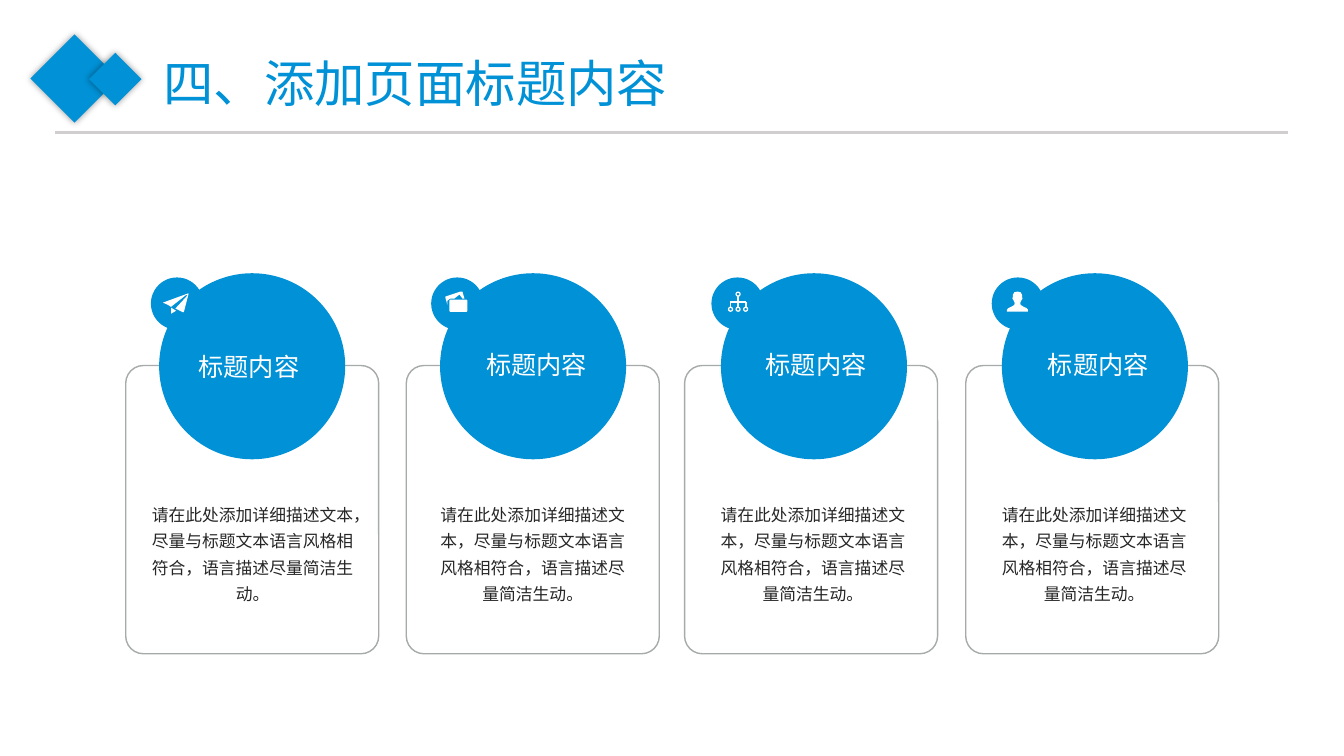
from dataclasses import dataclass

from lxml import etree
from pptx import Presentation
from pptx.dml.color import RGBColor
from pptx.enum.shapes import MSO_CONNECTOR, MSO_SHAPE
from pptx.enum.text import MSO_ANCHOR, MSO_AUTO_SIZE, PP_ALIGN
from pptx.oxml.ns import qn
from pptx.util import Pt

RECTANGLE, ROUNDED, OVAL = MSO_SHAPE.RECTANGLE, MSO_SHAPE.ROUNDED_RECTANGLE, MSO_SHAPE.OVAL
STRAIGHT = MSO_CONNECTOR.STRAIGHT
TOP, MIDDLE = MSO_ANCHOR.TOP, MSO_ANCHOR.MIDDLE
LEFT, CENTER = PP_ALIGN.LEFT, PP_ALIGN.CENTER
FIT_SHAPE = MSO_AUTO_SIZE.SHAPE_TO_FIT_TEXT


@dataclass(frozen=True)
class Theme:
    font: str = "Noto Sans CJK SC"
    blue: str = "0091D6"
    white: str = "FFFFFF"
    ink: str = "262626"
    border: str = "A6AAA9"
    rule: str = "D0CECE"
    title_size: float = 36
    label_size: float = 18
    body_size: float = 12


THEME = Theme()
TITLE = "四、添加页面标题内容"
LABEL = "标题内容"
DESCRIPTION = "请在此处添加详细描述文本，尽量与标题文本语言风格相符合，语言描述尽量简洁生动。"

COLUMNS = [
    dict(icon="plane", card=89.8, label=(110.9, 133.9, 1), description=(106.6, 147.6)),
    dict(icon="folder", card=290.2, label=(321.1, 124.6, 0.9), description=(308.9, 143.3)),
    dict(icon="network", card=489, label=(520.6, 124.6, 0.9), description=(509, 143.3)),
    dict(icon="person", card=689.8, label=(722.2, 124.6, 0.9), description=(709.9, 143.3)),
]
DIAMONDS = [(31, 33.8, 44.6), (69.1, 43.2, 26.6)]

CIRCLE_LEFT, CIRCLE_TOP, CIRCLE_SIZE, CIRCLE_PITCH = 113.7, 195.2, 132.9, 200.65
BADGE_LEFT, BADGE_TOP, BADGE_SIZE, BADGE_PITCH = 107.8, 198.2, 37.3, 200.2
CARD_TOP, CARD_WIDTH, CARD_HEIGHT = 261.1, 180.7, 205.9

PERSON_CENTER = 18.4
PERSON_SIDE = [(0, 10.1), (2.2, 10.6), (3.2, 12.2), (3.4, 14.4), (3.6, 15.2), (2.9, 16.2),
               (2, 18), (2.2, 19.6), (4.3, 20.9), (6.6, 22), (7.5, 23), (7.5, 24.5)]
OUTLINES = {
    "plane": [
        [(14.4, 25.9), (18, 23.8), (14.4, 21.6)],
        [(26.8, 11.3), (8.6, 18), (12.2, 19.6), (14.4, 21), (25.3, 12.4), (26, 13),
         (17.5, 22.2), (23, 24.9), (23.6, 24.6), (26.9, 11.8)],
    ],
    "folder": [
        [(23.8, 15.1), (22.3, 10.1), (20.9, 10.1), (10.1, 13.7), (10.1, 14.4), (11.5, 19.4),
         (11.5, 16.6), (13.7, 15.1), (16.6, 15.1), (20.2, 12.2), (22.3, 15.1)],
        [(13.6, 15.8), (25.2, 15.8), (25.9, 16.5), (25.9, 23.9), (25.2, 24.6),
         (13.6, 24.6), (12.9, 23.9), (12.9, 16.5)],
    ],
    "person": [
        [(PERSON_CENTER + dx, y) for dx, y in PERSON_SIDE]
        + [(PERSON_CENTER - dx, y) for dx, y in reversed(PERSON_SIDE)],
    ],
}
NETWORK_NODES = [(19, 11.9), (13.6, 22.7), (19, 22.7), (24.4, 22.7)]
NETWORK_LINKS = [(19, 13.3, 19, 21.3), (13, 17.3, 25, 17.3),
                 (13.6, 17.3, 13.6, 21.3), (24.4, 17.3, 24.4, 21.3)]
NODE_SIZE = 2.8

presentation = Presentation()
presentation.slide_width, presentation.slide_height = Pt(960), Pt(540)
slide = presentation.slides.add_slide(presentation.slide_layouts[5])
shapes = slide.shapes


def rgb(value):
    return RGBColor.from_string(value)


def paint(shape, fill=None, border=None, weight=1):
    shape.shadow.inherit = False
    if fill:
        shape.fill.solid()
        shape.fill.fore_color.rgb = rgb(fill)
    else:
        shape.fill.background()
    if border:
        shape.line.color.rgb = rgb(border)
        shape.line.width = Pt(weight)
    else:
        shape.line.fill.background()


def add_figure(kind, left, top, width, height, **style):
    figure = shapes.add_shape(kind, Pt(left), Pt(top), Pt(width), Pt(height))
    paint(figure, **style)
    return figure


def add_rule(x1, y1, x2, y2, color, weight):
    rule = shapes.add_connector(STRAIGHT, Pt(x1), Pt(y1), Pt(x2), Pt(y2))
    rule.line.color.rgb = rgb(color)
    rule.line.width = Pt(weight)
    etree.SubElement(rule._element.spPr, qn("a:effectLst"))


def add_glow(shape):
    effects = shape._element.spPr.find(qn("a:effectLst"))
    shadow = etree.SubElement(effects, qn("a:outerShdw"), blurRad=str(Pt(5)), dist="0", dir="0",
                              algn="ctr", rotWithShape="0")
    color = etree.SubElement(shadow, qn("a:srgbClr"), val="000000")
    etree.SubElement(color, qn("a:alpha"), val="40000")


def write(frame, text, size, color, align, anchor, spacing=1, before=0):
    frame.word_wrap = True
    frame.vertical_anchor = anchor
    paragraph = frame.paragraphs[0]
    paragraph.alignment = align
    paragraph.line_spacing = spacing
    paragraph.space_before = Pt(before)
    run = paragraph.add_run()
    run.text = text
    run.font.size = Pt(size)
    run.font.color.rgb = rgb(color)
    run.font.name = THEME.font
    etree.SubElement(run._r.rPr, qn("a:ea"), typeface=THEME.font)


def add_caption(left, top, width, height, text, size, color, spacing, before):
    frame = shapes.add_textbox(Pt(left), Pt(top), Pt(width), Pt(height)).text_frame
    frame.margin_left = frame.margin_right = frame.margin_top = frame.margin_bottom = 0
    write(frame, text, size, color, CENTER, MIDDLE, spacing, before)


def add_icon(name, left, top):
    if name == "network":
        for x1, y1, x2, y2 in NETWORK_LINKS:
            add_rule(left + x1, top + y1, left + x2, top + y2, THEME.white, 1.3)
        for x, y in NETWORK_NODES:
            add_figure(OVAL, left + x - NODE_SIZE / 2, top + y - NODE_SIZE / 2, NODE_SIZE,
                       NODE_SIZE, fill=THEME.blue, border=THEME.white, weight=0.9)
        return
    for outline in OUTLINES[name]:
        start, *rest = [(Pt(left + x), Pt(top + y)) for x, y in outline]
        builder = shapes.build_freeform(*start, scale=1)
        builder.add_line_segments(rest, close=True)
        paint(builder.convert_to_shape(), fill=THEME.white)


title = shapes.title
title.left, title.top, title.width, title.height = Pt(109.4), Pt(33.8), Pt(447.1), Pt(51.1)
write(title.text_frame, TITLE, THEME.title_size, THEME.blue, LEFT, TOP)
title.text_frame.auto_size = FIT_SHAPE

add_rule(39.6, 94.7, 920.2, 94.7, THEME.rule, 2.25)
for left, top, size in DIAMONDS:
    diamond = add_figure(RECTANGLE, left, top, size, size, fill=THEME.blue)
    diamond.rotation = 315
    add_glow(diamond)

for index, column in enumerate(COLUMNS):
    card = add_figure(ROUNDED, column["card"], CARD_TOP, CARD_WIDTH, CARD_HEIGHT,
                      border=THEME.border)
    card.adjustments[0] = 0.07
    add_figure(OVAL, CIRCLE_LEFT + index * CIRCLE_PITCH, CIRCLE_TOP, CIRCLE_SIZE, CIRCLE_SIZE,
               fill=THEME.blue)
    badge_left = BADGE_LEFT + index * BADGE_PITCH
    add_figure(OVAL, badge_left, BADGE_TOP, BADGE_SIZE, BADGE_SIZE, fill=THEME.blue)
    add_icon(column["icon"], badge_left, BADGE_TOP)
    left, width, spacing = column["label"]
    add_caption(left, 239, width, 45.4, LABEL, THEME.label_size, THEME.white, spacing, 3.6)
    left, width = column["description"]
    add_caption(left, 349.2, width, 89.3, DESCRIPTION, THEME.body_size, THEME.ink, 1.3, 10)

presentation.save("out.pptx")
